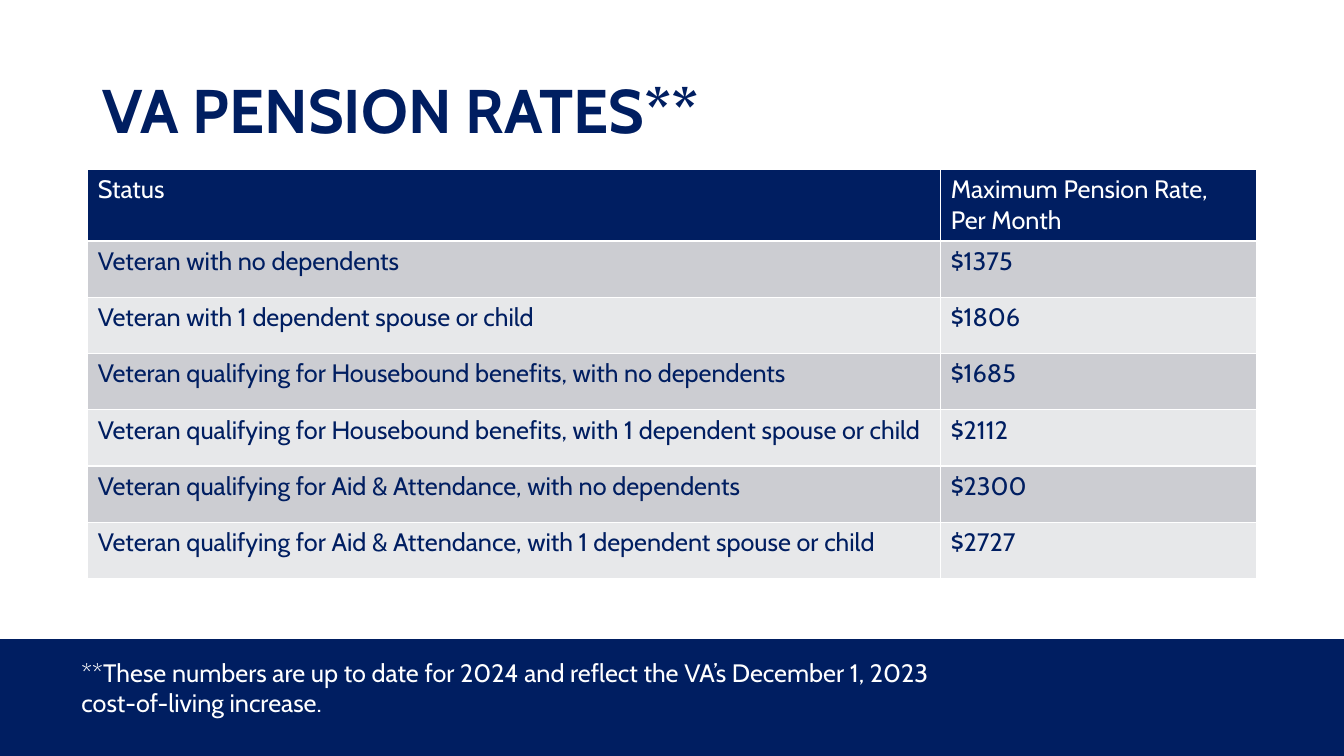
from pptx import Presentation
from pptx import util as u
from pptx.dml.color import RGBColor
from pptx.enum import shapes, text

NAVY = RGBColor(0x00, 0x1E, 0x61)
WHITE = RGBColor(0xFF, 0xFF, 0xFF)
DARK_BAND = RGBColor(0xCC, 0xCD, 0xD2)
LIGHT_BAND = RGBColor(0xE7, 0xE8, 0xEA)

PENSION_RATES = [
    ("Status", "Maximum Pension Rate, Per Month"),
    ("Veteran with no dependents", "$1375"),
    ("Veteran with 1 dependent spouse or child", "$1806"),
    ("Veteran qualifying for Housebound benefits, with no dependents", "$1685"),
    ("Veteran qualifying for Housebound benefits, with 1 dependent spouse or child", "$2112"),
    ("Veteran qualifying for Aid & Attendance, with no dependents", "$2300"),
    ("Veteran qualifying for Aid & Attendance, with 1 dependent spouse or child", "$2727"),
]


def inches(*lengths):
    return [u.Inches(length) for length in lengths]


class SlideBuilder:
    font_name = "Cabin"
    body_size = 18

    def __init__(self, slide):
        self.slide = slide

    def set_text(self, text_frame, wording, color, size=body_size, bold=False):
        """Fill a text frame with one left-aligned paragraph."""
        text_frame.text = wording
        paragraph = text_frame.paragraphs[0]
        paragraph.alignment = text.PP_ALIGN.LEFT
        for run in paragraph.runs:
            run.font.name = self.font_name
            run.font.size = u.Pt(size)
            run.font.bold = bold
            run.font.color.rgb = color
        return paragraph

    def title(self, wording, box):
        shape = self.slide.shapes.title
        shape.left, shape.top, shape.width, shape.height = inches(*box)
        shape.text_frame.vertical_anchor = text.MSO_ANCHOR.MIDDLE
        paragraph = self.set_text(shape.text_frame, wording, NAVY, size=44, bold=True)
        paragraph.line_spacing = 0.9

    def rectangle(self, box, color):
        shape = self.slide.shapes.add_shape(shapes.MSO_SHAPE.RECTANGLE, *inches(*box))
        shape.shadow.inherit = False
        shape.fill.solid()
        shape.fill.fore_color.rgb = color
        shape.line.fill.background()

    def text_box(self, wording, box, color):
        text_frame = self.slide.shapes.add_textbox(*inches(*box)).text_frame
        text_frame.word_wrap = True
        text_frame.auto_size = text.MSO_AUTO_SIZE.SHAPE_TO_FIT_TEXT
        self.set_text(text_frame, wording, color)

    def table(self, rows, box, column_widths, header_height):
        table_height = box[3]
        table = self.slide.shapes.add_table(
            len(rows), len(column_widths), *inches(*box)).table
        for column, column_width in zip(table.columns, column_widths):
            column.width = u.Inches(column_width)
        row_height = (table_height - header_height) / (len(rows) - 1)
        for row_index, values in enumerate(rows):
            is_header = row_index == 0
            table.rows[row_index].height = u.Inches(header_height if is_header else row_height)
            band = DARK_BAND if row_index % 2 else LIGHT_BAND
            for column_index, value in enumerate(values):
                cell = table.cell(row_index, column_index)
                cell.fill.solid()
                cell.fill.fore_color.rgb = NAVY if is_header else band
                self.set_text(cell.text_frame, value, WHITE if is_header else NAVY)


def main():
    presentation = Presentation()
    presentation.slide_width, presentation.slide_height = inches(13.33, 7.5)
    title_only = presentation.slide_layouts[5]
    builder = SlideBuilder(presentation.slides.add_slide(title_only))
    builder.rectangle((0, 6.34, 13.33, 1.16), NAVY)
    builder.title("VA PENSION RATES**", (0.92, 0.4, 11.5, 1.45))
    builder.table(PENSION_RATES, (0.87, 1.68, 11.59, 4.05), (8.46, 3.13), header_height=0.7)
    builder.text_box(
        "**These numbers are up to date for 2024 and reflect the VA’s "
        "December 1, 2023 cost-of-living increase.",
        (0.71, 6.47, 8.93, 0.71), WHITE)
    presentation.save("out.pptx")


if __name__ == "__main__":
    main()
